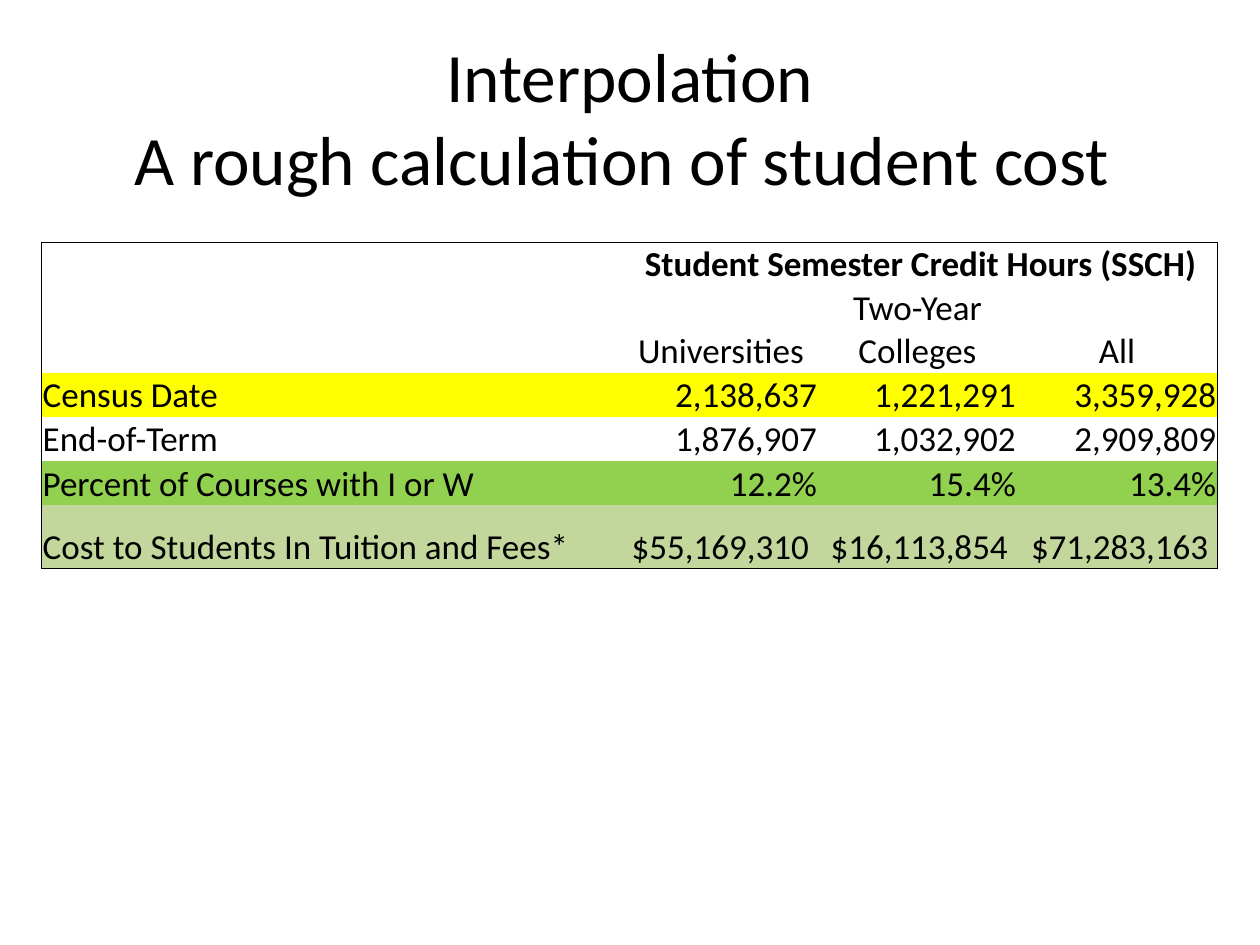
import dataclasses
import typing

import pptx
import pptx.dml.color
import pptx.enum.text
import pptx.oxml
import pptx.oxml.ns
import pptx.util
from pptx.util import Cm

ALIGN = pptx.enum.text.PP_ALIGN
ANCHOR = pptx.enum.text.MSO_ANCHOR
FONT = "Calibri"
BLACK = "000000"
COLUMN_WIDTHS = (11.1, 0.64, 3.91, 4.01, 4.04)


@dataclasses.dataclass(frozen=True)
class TableRow:
    height: float
    label: str
    values: tuple[str, ...]
    align: ALIGN = ALIGN.RIGHT
    fill: typing.Optional[str] = None
    bold: bool = False


ROWS = (
    TableRow(0.89, "", ("Student Semester Credit Hours (SSCH)",), ALIGN.CENTER, bold=True),
    TableRow(1.75, "", ("Universities", "Two-Year Colleges", "All"), ALIGN.CENTER),
    TableRow(0.89, "Census Date", ("2,138,637", "1,221,291", "3,359,928"), fill="FFFF00"),
    TableRow(0.89, "End-of-Term", ("1,876,907", "1,032,902", "2,909,809")),
    TableRow(0.89, "Percent of Courses with I or W", ("12.2%", "15.4%", "13.4%"), fill="92D050"),
    TableRow(
        1.27,
        "Cost to Students In Tuition and Fees*",
        ("$55,169,310 ", "$16,113,854 ", "$71,283,163 "),
        fill="C3D69B",
    ),
)


def color(value: str) -> pptx.dml.color.RGBColor:
    return pptx.dml.color.RGBColor.from_string(value)


def add_run(paragraph, text: str, size: float, bold: bool = False) -> None:
    run = paragraph.add_run()
    run.text = text
    run.font.name = FONT
    run.font.size = pptx.util.Pt(size)
    run.font.bold = bold
    run.font.color.rgb = color(BLACK)


def add_title(slide, lines: tuple[str, ...]) -> None:
    shape = slide.shapes.add_textbox(Cm(1.27), Cm(0.76), Cm(22.86), Cm(3.18))
    frame = shape.text_frame
    frame.word_wrap = True
    frame.vertical_anchor = ANCHOR.MIDDLE
    paragraph = frame.paragraphs[0]
    paragraph.alignment = ALIGN.CENTER
    for index, line in enumerate(lines):
        if index:
            paragraph.add_line_break()
        add_run(paragraph, line, 39.6)


def set_borders(cell, visible: dict[str, bool]) -> None:
    properties = cell._tc.get_or_add_tcPr()
    namespace = pptx.oxml.ns.nsdecls("a")
    for position, (side, shown) in enumerate(visible.items()):
        paint = f'<a:solidFill><a:srgbClr val="{BLACK}"/></a:solidFill>' if shown else "<a:noFill/>"
        line = pptx.oxml.parse_xml(f'<a:ln{side} {namespace} w="9525">{paint}</a:ln{side}>')
        properties.insert(position, line)


def format_cell(cell, fill: typing.Optional[str]) -> None:
    cell.margin_left = cell.margin_right = cell.margin_top = Cm(0.02)
    cell.margin_bottom = Cm(0)
    cell.vertical_anchor = ANCHOR.BOTTOM
    if fill:
        cell.fill.solid()
        cell.fill.fore_color.rgb = color(fill)
    else:
        cell.fill.background()


def add_cost_table(slide) -> None:
    last_row, last_column = len(ROWS) - 1, len(COLUMN_WIDTHS) - 1
    table = slide.shapes.add_table(
        len(ROWS), len(COLUMN_WIDTHS), Cm(0.84), Cm(4.88),
        Cm(sum(COLUMN_WIDTHS)), Cm(sum(row.height for row in ROWS)),
    ).table
    table.first_row = table.horz_banding = False
    for column, width in zip(table.columns, COLUMN_WIDTHS):
        column.width = Cm(width)
    table.cell(0, 2).merge(table.cell(0, last_column))

    for row_index, row in enumerate(ROWS):
        table.rows[row_index].height = Cm(row.height)
        for column_index in range(len(COLUMN_WIDTHS)):
            cell = table.cell(row_index, column_index)
            format_cell(cell, row.fill)
            right_edge = column_index == last_column or cell.is_merge_origin
            set_borders(cell, {
                "L": column_index == 0,
                "R": right_edge,
                "T": row_index == 0,
                "B": row_index == last_row,
            })
        texts = {0: row.label, **dict(enumerate(row.values, start=2))}
        for column_index, text in texts.items():
            if text:
                paragraph = table.cell(row_index, column_index).text_frame.paragraphs[0]
                paragraph.alignment = row.align if column_index else ALIGN.LEFT
                add_run(paragraph, text, 20, row.bold)


def main() -> None:
    presentation = pptx.Presentation()
    presentation.slide_width = Cm(25.4)
    presentation.slide_height = Cm(19.05)
    slide = presentation.slides.add_slide(presentation.slide_layouts[6])
    add_title(slide, ("Interpolation", "A rough calculation of student cost "))
    add_cost_table(slide)
    presentation.save("out.pptx")


if __name__ == "__main__":
    main()
